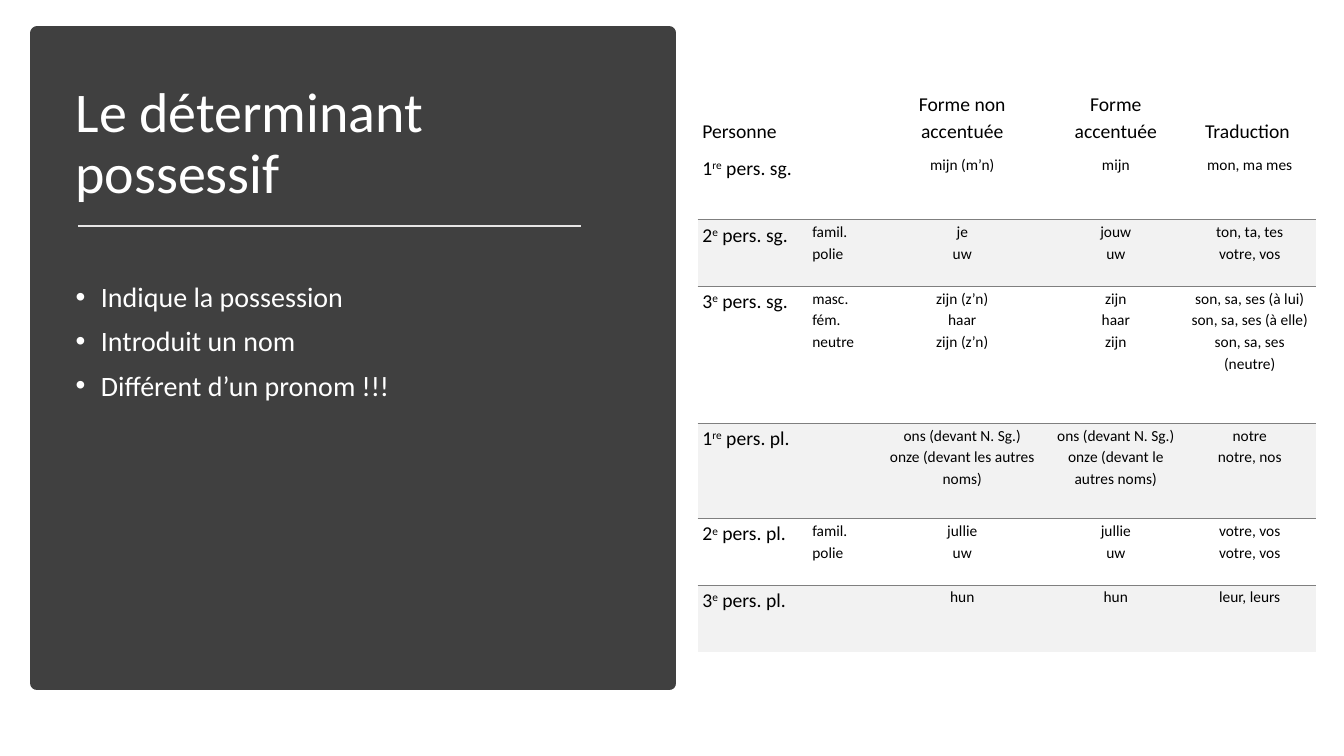
from lxml.etree import SubElement
from pptx import Presentation
from pptx.dml.color import RGBColor
from pptx.enum.shapes import MSO_CONNECTOR as Connector, MSO_SHAPE as Shape
from pptx.enum.text import MSO_ANCHOR as Anchor, MSO_AUTO_SIZE as AutoSize, PP_ALIGN as Align
from pptx.oxml import parse_xml
from pptx.oxml.ns import nsdecls, qn
from pptx.util import Cm, Pt

CHARCOAL = RGBColor(0x40, 0x40, 0x40)
WHITE = RGBColor(0xFF, 0xFF, 0xFF)
BLACK = RGBColor(0, 0, 0)
PALE = RGBColor(0xE7, 0xE6, 0xE6)
BAND = RGBColor(0xF2, 0xF2, 0xF2)
RULE = RGBColor(0x7F, 0x7F, 0x7F)
FONT = "Calibri"
NO_STYLE = "{2D5ABB26-0587-4C30-8999-92F81FD0307C}"

TITLE = "Le déterminant possessif"
POINTS = ["Indique la possession", "Introduit un nom", "Différent d’un pronom !!!"]

HEADINGS = ["Personne", "", "Forme non accentuée", "Forme accentuée", "Traduction "]
# Person as (number, ordinal ending, rest), then the lines of each other cell
PERSONS = [
    (("1", "re", " pers. sg."), "", "mijn (m’n)", "mijn", "mon, ma mes"),
    (("2", "e", " pers. sg."), "famil.\npolie", "je\nuw", "jouw\nuw",
     "ton, ta, tes\nvotre, vos"),
    (("3", "e", " pers. sg."), "masc.\nfém.\nneutre", "zijn (z’n)\nhaar\nzijn (z’n)",
     "zijn\nhaar\nzijn", "son, sa, ses (à lui)\nson, sa, ses (à elle)\nson, sa, ses (neutre)"),
    (("1", "re", " pers. pl."), "", "ons (devant N. Sg.)\nonze (devant les autres noms)",
     "ons (devant N. Sg.)\nonze (devant le autres noms)", "notre\nnotre, nos"),
    (("2", "e", " pers. pl."), "famil.\npolie", "jullie\nuw", "jullie\nuw",
     "votre, vos\nvotre, vos"),
    (("3", "e", " pers. pl."), "", "hun", "hun", "leur, leurs"),
]
COLUMN_WIDTHS = [2.77, 1.73, 4.34, 3.4, 3.35]
ROW_HEIGHTS = [1.68, 1.68, 1.68, 3.45, 2.4, 1.68, 1.68]


def apply(target, **values):
    for name, value in values.items():
        setattr(target, name, value)


def set_font(font, size, color):
    apply(font, name=FONT, size=Pt(size))
    font.color.rgb = color


def place(holder, left, top, width, height):
    apply(holder, left=Cm(left), top=Cm(top), width=Cm(width), height=Cm(height))


def add_panel(slide):
    panel = slide.shapes.add_shape(Shape.RECTANGLE, Cm(0.94), Cm(0.84), Cm(15.93), Cm(16.38))
    panel.shadow.inherit = False
    panel.fill.solid()
    panel.fill.fore_color.rgb = CHARCOAL
    panel.line.color.rgb = CHARCOAL
    panel.line.width = Pt(10)
    # Behind the placeholders
    slide.shapes._spTree.insert(2, panel._element)


def add_divider(slide):
    divider = slide.shapes.add_connector(
        Connector.STRAIGHT, Cm(1.96), Cm(5.69), Cm(14.63), Cm(5.69))
    divider.line.color.rgb = PALE
    divider.line.width = Pt(1.75)
    SubElement(divider._element.spPr, qn("a:effectLst"))


def fill_title(title):
    place(title, 1.65, 1.78, 14.55, 3.73)
    frame = title.text_frame
    frame.text = TITLE
    apply(frame, vertical_anchor=Anchor.MIDDLE, word_wrap=True, auto_size=AutoSize.NONE)
    heading = frame.paragraphs[0]
    apply(heading, alignment=Align.LEFT, line_spacing=0.9)
    set_font(heading.runs[0].font, 40, WHITE)


def fill_points(body):
    place(body, 1.65, 5.89, 14.55, 10.49)
    frame = body.text_frame
    frame.text = "\n".join(POINTS)
    apply(frame, vertical_anchor=Anchor.TOP, word_wrap=True,
          auto_size=AutoSize.NONE, margin_top=Cm(1.25))
    for index, point in enumerate(frame.paragraphs):
        apply(point, alignment=Align.LEFT, line_spacing=0.9,
              space_before=Pt(10 if index else 0))
        set_font(point.runs[0].font, 20, WHITE)
        properties = point._p.get_or_add_pPr()
        properties.set("marL", str(Cm(0.64)))
        properties.set("indent", str(-Cm(0.64)))
        SubElement(properties, qn("a:buFont"), typeface="Arial")
        SubElement(properties, qn("a:buChar"), char="•")


def fill_cell(cell, content, size, alignment, anchor):
    apply(cell, margin_left=Cm(0.12), margin_right=Cm(0.12), margin_top=0,
          margin_bottom=Cm(0.23), vertical_anchor=anchor)
    frame = cell.text_frame
    if isinstance(content, tuple):
        for part in content:
            frame.paragraphs[0].add_run().text = part
        ordinal = frame.paragraphs[0].runs[1]
        ordinal.font._element.set("baseline", "30000")
    else:
        frame.text = content
    for paragraph in frame.paragraphs:
        apply(paragraph, alignment=alignment, line_spacing=1.15)
        for run in paragraph.runs:
            set_font(run.font, size, BLACK)


def shade_cell(cell):
    cell.fill.solid()
    cell.fill.fore_color.rgb = BAND
    top_rule = parse_xml(
        f'<a:lnT {nsdecls("a")} w="{Pt(1)}"><a:solidFill>'
        f'<a:srgbClr val="{RULE}"/></a:solidFill></a:lnT>')
    cell._tc.get_or_add_tcPr().insert(0, top_rule)


def add_possessives(slide):
    rows = [HEADINGS, *PERSONS]
    table = slide.shapes.add_table(
        len(rows), len(HEADINGS), Cm(17.58), Cm(2.18),
        Cm(sum(COLUMN_WIDTHS)), Cm(sum(ROW_HEIGHTS))).table
    apply(table, first_row=False, horz_banding=False)
    table._tbl.tblPr.find(qn("a:tableStyleId")).text = NO_STYLE
    for column, width in zip(table.columns, COLUMN_WIDTHS):
        column.width = Cm(width)
    for row, height in zip(table.rows, ROW_HEIGHTS):
        row.height = Cm(height)

    for r, contents in enumerate(rows):
        for c, content in enumerate(contents):
            cell = table.cell(r, c)
            fill_cell(cell, content,
                      size=14 if r == 0 or c == 0 else 11,
                      alignment=Align.LEFT if c < 2 else Align.CENTER,
                      anchor=Anchor.TOP if r else Anchor.BOTTOM)
            # Every second person is shaded and ruled off
            if r and r % 2 == 0:
                shade_cell(cell)
            else:
                cell.fill.background()


def main():
    deck = Presentation()
    apply(deck, slide_width=Cm(33.87), slide_height=Cm(19.05))
    slide = deck.slides.add_slide(deck.slide_layouts[1])

    # Left: title and key points on a dark panel
    add_panel(slide)
    fill_title(slide.shapes.title)
    add_divider(slide)
    fill_points(slide.placeholders[1])

    # Right: possessives by person
    add_possessives(slide)
    deck.save("out.pptx")


if __name__ == "__main__":
    main()
